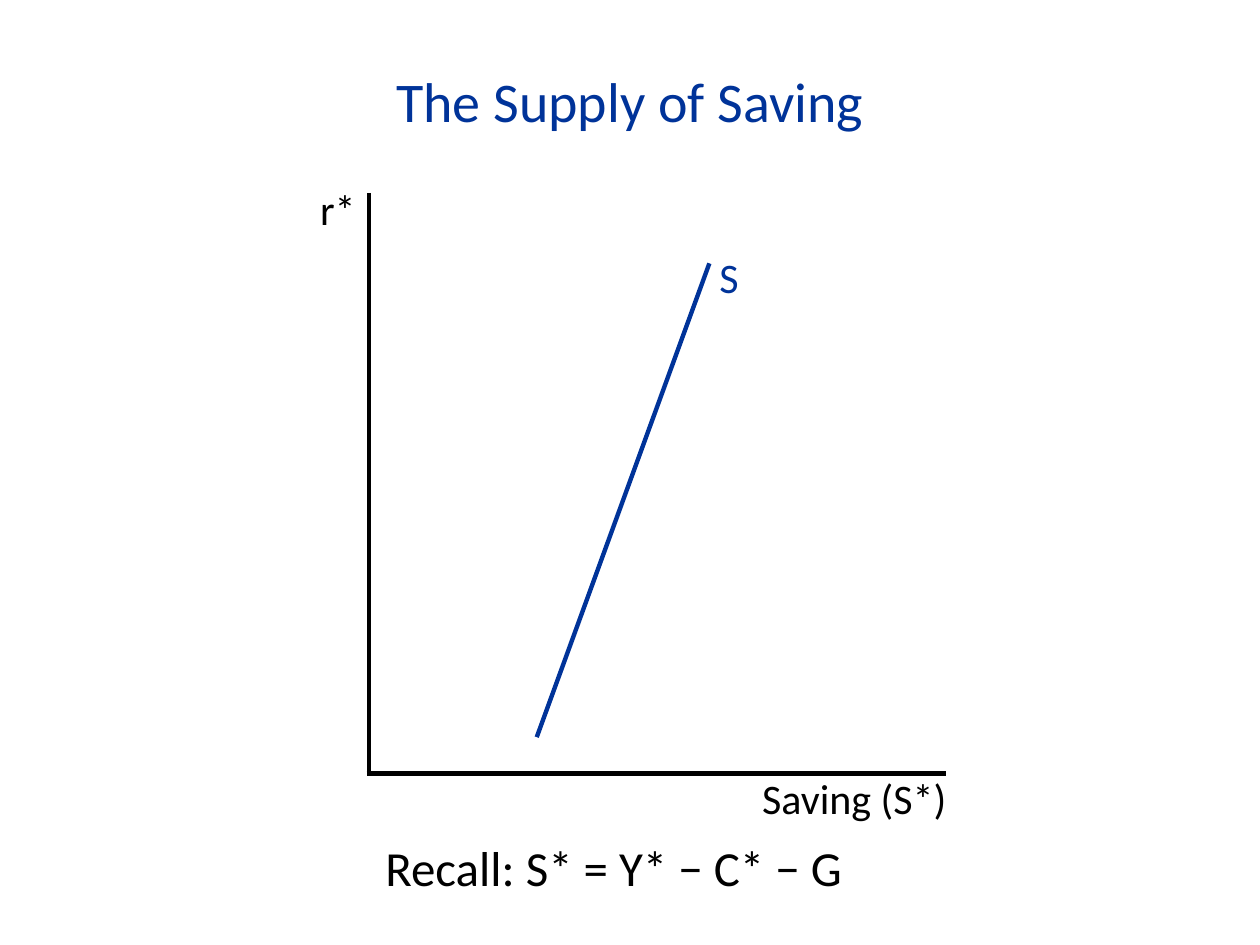
from lxml import etree
from pptx import Presentation
from pptx.dml.color import RGBColor
from pptx.enum.shapes import MSO_CONNECTOR
from pptx.enum.text import MSO_ANCHOR as Anchor, PP_ALIGN as Align
from pptx.oxml.ns import qn
from pptx.util import Cm, Pt

COLORS = {"axis": "000000", "text": "000000", "supply": "003399"}
FONT = "Calibri"


def add_label(slide, text, left, top, width, height, size=24,
              color="text", align=Align.RIGHT, anchor=Anchor.TOP):
    label = slide.shapes.add_textbox(Cm(left), Cm(top), Cm(width), Cm(height))
    frame = label.text_frame
    frame.word_wrap = True
    frame.vertical_anchor = anchor
    paragraph = frame.paragraphs[0]
    paragraph.text = text
    paragraph.alignment = align
    paragraph.font.name = FONT
    paragraph.font.size = Pt(size)
    paragraph.font.color.rgb = RGBColor.from_string(COLORS[color])


def add_line(slide, start, end, color):
    line = slide.shapes.add_connector(
        MSO_CONNECTOR.STRAIGHT, *map(Cm, start + end))
    line.line.width = Pt(2.5)
    line.line.color.rgb = RGBColor.from_string(COLORS[color])
    etree.SubElement(line._element.spPr, qn("a:effectLst"))


def main():
    deck = Presentation()
    deck.slide_width, deck.slide_height = Cm(25.4), Cm(19.05)
    slide = deck.slides.add_slide(deck.slide_layouts[6])

    add_label(slide, "The Supply of Saving", 1.78, 1.2, 21.84, 1.62, size=32,
              color="supply", align=Align.CENTER, anchor=Anchor.MIDDLE)

    axis_x, axis_y = 7.44, 15.59
    add_line(slide, (axis_x - 0.05, axis_y), (19.08, axis_y), "axis")
    add_line(slide, (axis_x, 3.89), (axis_x, axis_y), "axis")
    add_label(slide, "r*", 6.07, 3.58, 1.35, 1.27)
    add_label(slide, "Saving (S*)", 14.3, 15.44, 5.03, 1.27)

    add_line(slide, (10.82, 14.86), (14.3, 5.31), "supply")
    add_label(slide, "S", 13.67, 4.95, 1.47, 1.27, color="supply")

    add_label(slide, "Recall: S* = Y* − C* − G", 7.52, 16.74, 10.36, 1.47,
              size=28, align=Align.LEFT, anchor=Anchor.MIDDLE)

    deck.save("out.pptx")


if __name__ == "__main__":
    main()
